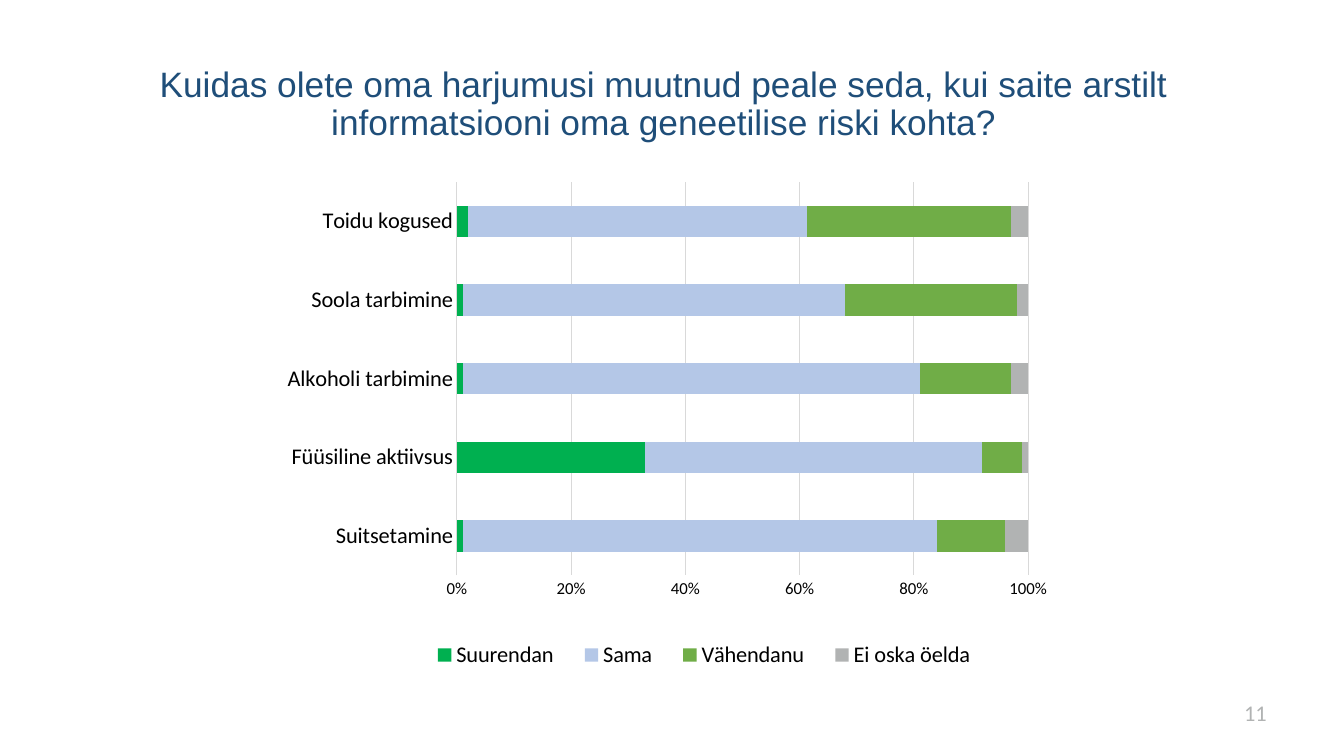
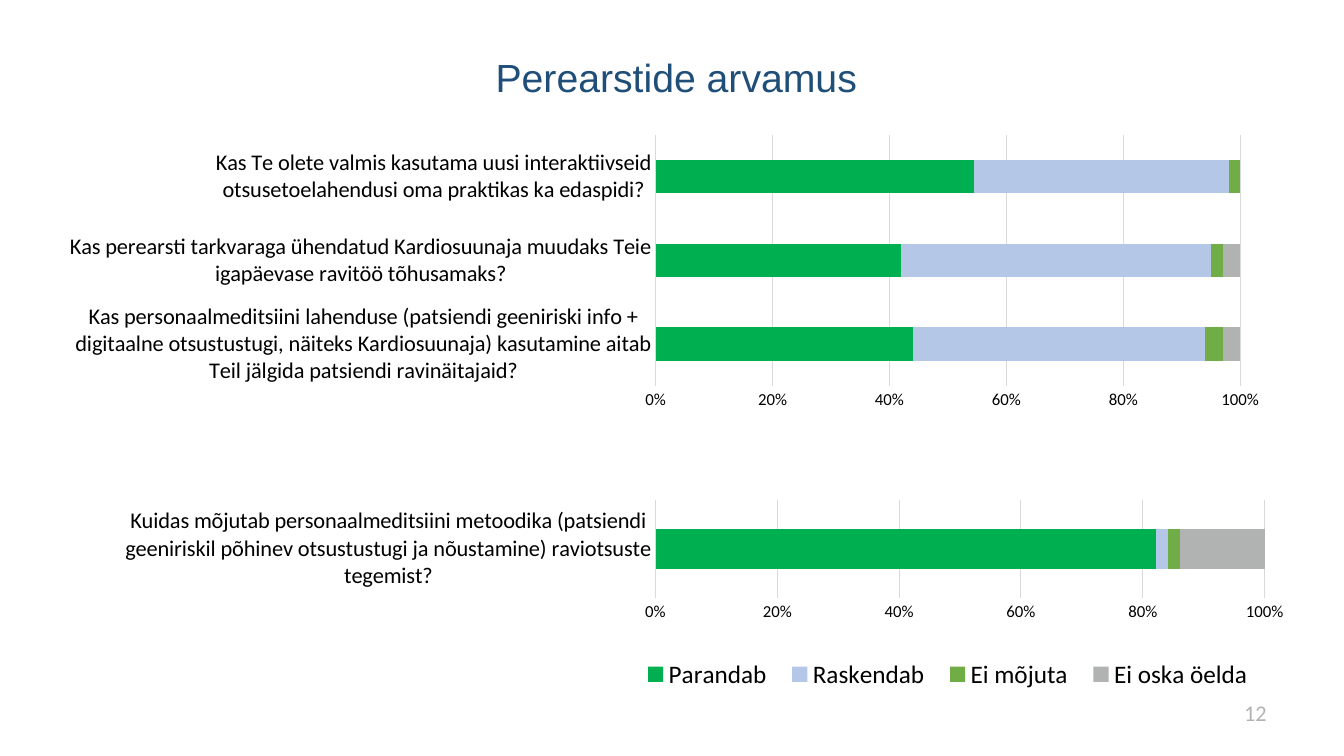
from lxml.etree import SubElement
from pptx import Presentation
from pptx.chart.data import CategoryChartData
from pptx.dml.color import RGBColor
from pptx.enum.chart import XL_CHART_TYPE, XL_LEGEND_POSITION, XL_TICK_MARK
from pptx.enum.text import MSO_ANCHOR, MSO_AUTO_SIZE, PP_ALIGN
from pptx.oxml.ns import qn
from pptx.util import Pt

COLORS = {"title": "1F4E79", "text": "000000", "number": "B1B3B3", "grid": "D9D9D9"}
SERIES_COLORS = ["00B050", "B4C7E7", "70AD47", "B1B3B3"]
TITLE_FONT, BODY_FONT = "Arial", "Calibri"
TITLE_ONLY_LAYOUT = 5

# Content: boxes are left, top, width, height in points;
# plot and legend areas are fractions of the chart.
# All charts on a slide share its legend; values hold one row per answer.
SLIDES = [
    {
        "number": "11",
        "title": "Kuidas olete oma harjumusi muutnud peale seda, kui saite arstilt "
                 "informatsiooni oma geneetilise riski kohta?",
        "title_box": (30, 48, 888, 54),
        "title_size": 25.2,
        "answers": ["Suurendan", "Sama", "Vähendanu", "Ei oska öelda"],
        "charts": [{
            "box": (168, 115, 609, 379.5),
            "plot": (0.26, 0.04, 0.67, 0.74),
            "legend": (0.21, 0.89, 0.68, 0.08),
            "legend_size": 16,
            "categories": ["Suitsetamine", "Füüsiline aktiivsus", "Alkoholi tarbimine",
                           "Soola tarbimine", "Toidu kogused"],
            "values": [
                [1, 33, 1, 1, 2],
                [83, 59, 80, 67, 60],
                [12, 7, 16, 30, 36],
                [4, 1, 3, 2, 3],
            ],
        }],
    },
    {
        "number": "12",
        "title": "Perearstide arvamus",
        "title_box": (54, 30, 858, 54),
        "title_size": 28,
        "answers": ["Parandab", "Raskendab", "Ei mõjuta", "Ei oska öelda"],
        "charts": [
            {
                "box": (42, 84, 870, 246),
                "plot": (0.49, 0.05, 0.48, 0.73),
                "legend": None,
                "categories": [
                    "Kas personaalmeditsiini lahenduse (patsiendi geeniriski info + digitaalne "
                    "otsustustugi, näiteks Kardiosuunaja) kasutamine aitab Teil jälgida "
                    "patsiendi ravinäitajaid?",
                    "Kas perearsti tarkvaraga ühendatud Kardiosuunaja muudaks Teie igapäevase "
                    "ravitöö tõhusamaks?",
                    "Kas Te olete valmis kasutama uusi interaktiivseid otsusetoelahendusi oma "
                    "praktikas ka edaspidi?",
                ],
                "values": [[44, 42, 55], [50, 53, 44], [3, 2, 2], [3, 3, 0]],
            },
            {
                "box": (42, 350.5, 888, 160),
                "plot": (0.48, 0.04, 0.49, 0.44),
                "legend": (0.46, 0.73, 0.51, 0.18),
                "legend_size": 18,
                "categories": [
                    "Kuidas mõjutab personaalmeditsiini metoodika (patsiendi geeniriskil põhinev "
                    "otsustustugi ja nõustamine) raviotsuste tegemist?",
                ],
                "values": [[83], [2], [2], [14]],
            },
        ],
    },
]


def points(box):
    return [Pt(length) for length in box]


def style_font(font, name, size, color):
    font.name = name
    font.size = Pt(size)
    font.bold = False
    font.color.rgb = RGBColor.from_string(COLORS[color])


def fill_text(shape, text, alignment, font_name, size, color):
    frame = shape.text_frame
    frame.text = text
    frame.word_wrap = True
    frame.auto_size = MSO_AUTO_SIZE.NONE
    frame.vertical_anchor = MSO_ANCHOR.MIDDLE
    para = frame.paragraphs[0]
    para.alignment = alignment
    style_font(para.runs[0].font, font_name, size, color)
    return para


def add_title(page, text, box, size):
    title = page.shapes.title
    title.left, title.top, title.width, title.height = points(box)
    para = fill_text(title, text, PP_ALIGN.CENTER, TITLE_FONT, size, "title")
    para.line_spacing = 0.9


def add_page_number(page, number):
    box = page.shapes.add_textbox(*points((804, 495, 108, 28.5)))
    fill_text(box, number, PP_ALIGN.RIGHT, BODY_FONT, 16, "number")


def place_manually(parent, position, area, inner=False):
    """Give a plot area or legend a fixed place within its chart."""
    for old_layout in parent.findall(qn("c:layout")):
        parent.remove(old_layout)
    layout = SubElement(parent, qn("c:layout"))
    parent.insert(position, layout)
    manual = SubElement(layout, qn("c:manualLayout"))
    settings = [("layoutTarget", "inner")] if inner else []
    settings += [("xMode", "edge"), ("yMode", "edge")]
    settings += zip("xywh", area)
    for tag, value in settings:
        SubElement(manual, qn("c:" + tag)).set("val", str(value))


def style_axes(chart):
    grid_color = RGBColor.from_string(COLORS["grid"])
    categories, values = chart.category_axis, chart.value_axis
    for axis, size in ((categories, 16), (values, 12)):
        axis.major_tick_mark = axis.minor_tick_mark = XL_TICK_MARK.NONE
        style_font(axis.tick_labels.font, BODY_FONT, size, "text")
    values.major_unit = 0.2
    values.has_major_gridlines = True
    values.tick_labels.number_format = "0%"
    values.tick_labels.number_format_is_linked = False
    values.format.line.fill.background()
    for line in (categories.format.line, values.major_gridlines.format.line):
        line.color.rgb = grid_color
        line.width = Pt(0.75)


def add_bar_chart(page, answers, content):
    data = CategoryChartData()
    data.categories = content["categories"]
    for answer, values in zip(answers, content["values"]):
        data.add_series(answer, values)
    chart = page.shapes.add_chart(
        XL_CHART_TYPE.BAR_STACKED_100, *points(content["box"]), data).chart
    chart.has_title = False
    style_font(chart.font, BODY_FONT, 10, "text")
    style_axes(chart)

    # Bars
    plot = chart.plots[0]
    plot.gap_width, plot.overlap = 150, 100
    plot.vary_by_categories = False
    for series, color in zip(plot.series, SERIES_COLORS):
        series.format.fill.solid()
        series.format.fill.fore_color.rgb = RGBColor.from_string(color)
    root = chart.element.find(qn("c:chart"))
    place_manually(root.find(qn("c:plotArea")), 0, content["plot"], inner=True)

    # Legend
    chart.has_legend = content["legend"] is not None
    if chart.has_legend:
        chart.legend.position = XL_LEGEND_POSITION.BOTTOM
        chart.legend.include_in_layout = False
        style_font(chart.legend.font, BODY_FONT, content["legend_size"], "text")
        place_manually(root.find(qn("c:legend")), 1, content["legend"])


def main():
    deck = Presentation()
    deck.slide_width, deck.slide_height = Pt(960), Pt(540)
    for content in SLIDES:
        page = deck.slides.add_slide(deck.slide_layouts[TITLE_ONLY_LAYOUT])
        add_title(page, content["title"], content["title_box"], content["title_size"])
        add_page_number(page, content["number"])
        for chart_content in content["charts"]:
            add_bar_chart(page, content["answers"], chart_content)
    deck.save("out.pptx")


if __name__ == "__main__":
    main()
